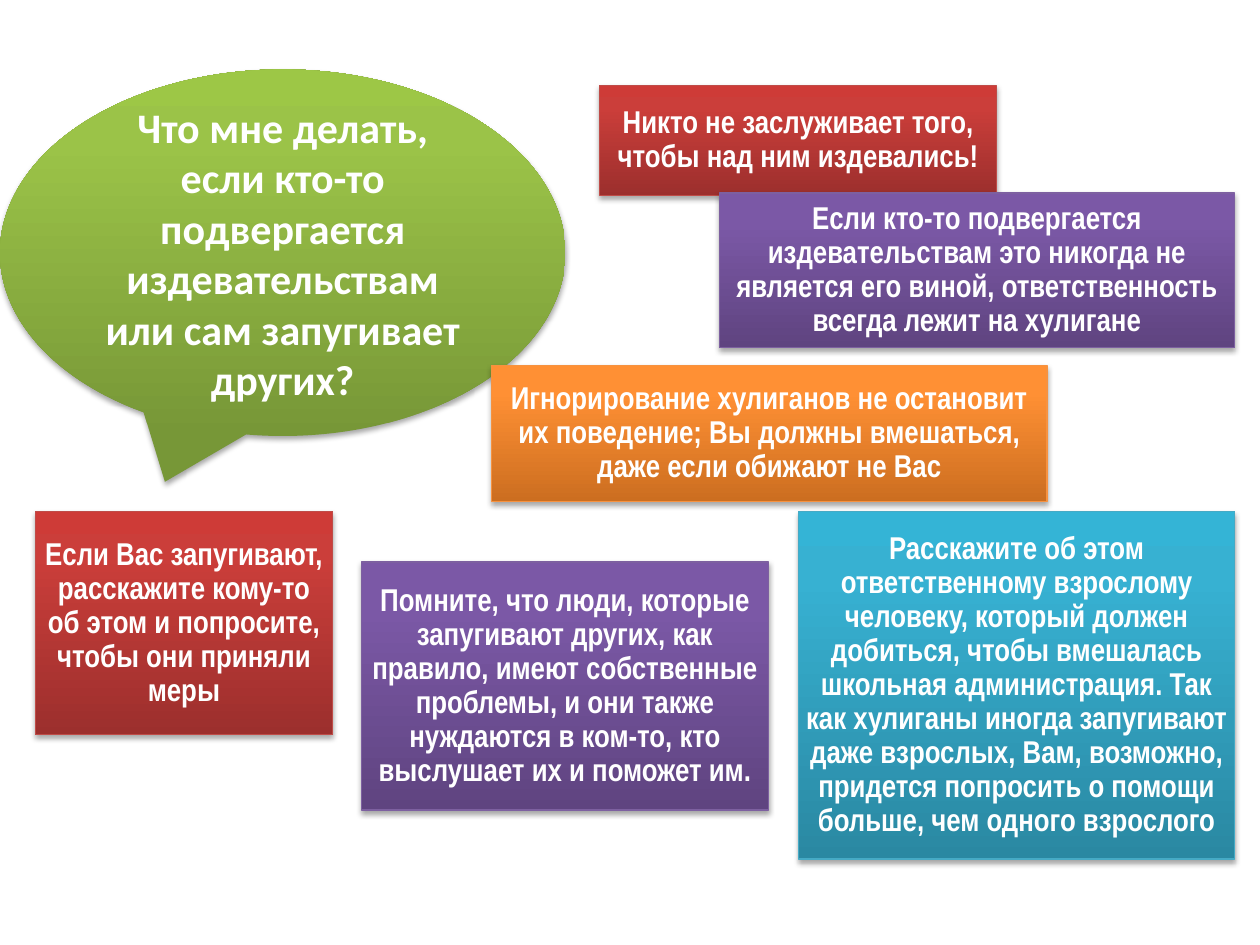
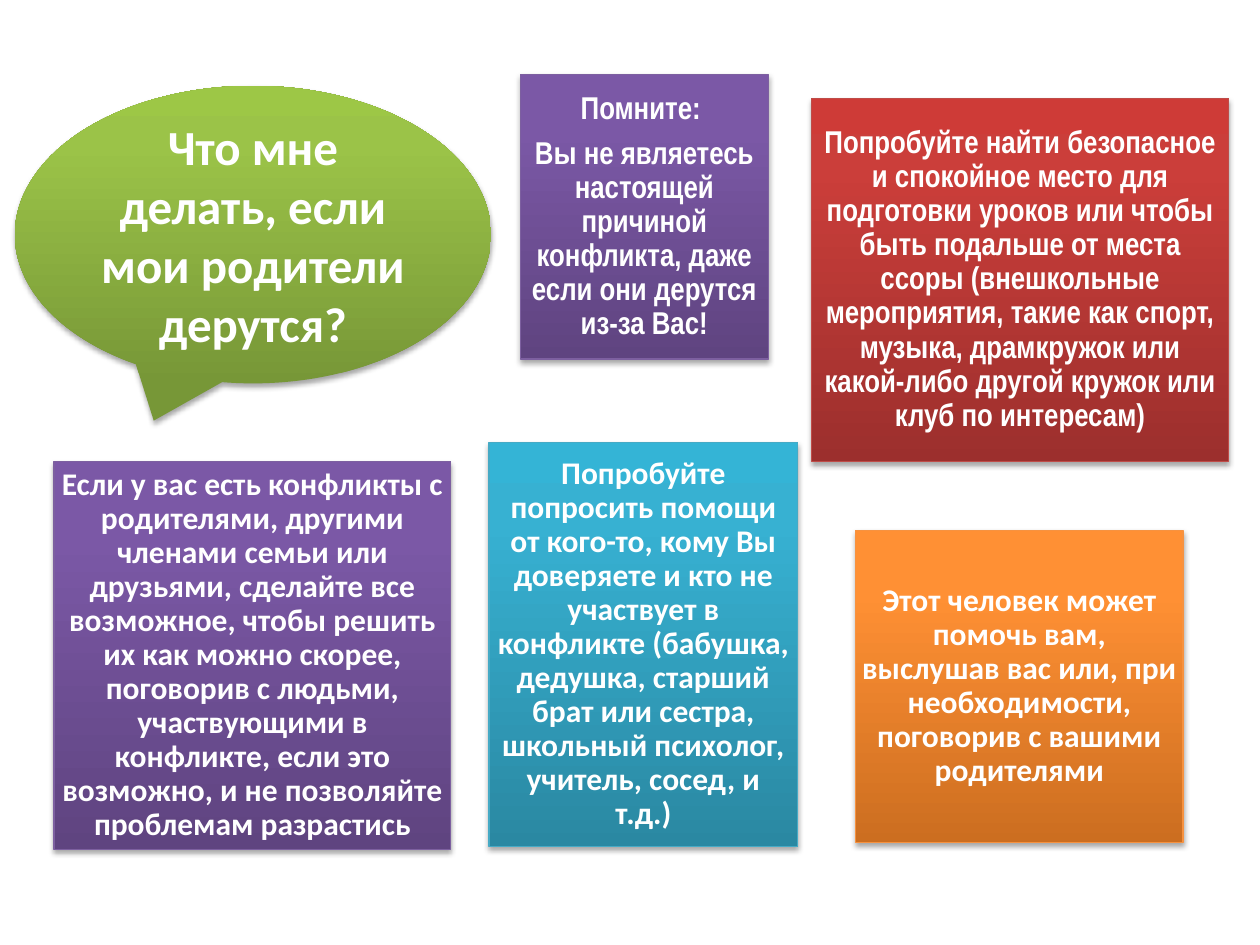
import pptx
import pptx.dml.color
import pptx.enum.shapes
import pptx.enum.text
import pptx.oxml
import pptx.oxml.ns
import pptx.util
import copy

Cm = pptx.util.Cm
Pt = pptx.util.Pt
RGBColor = pptx.dml.color.RGBColor
MSO_SHAPE = pptx.enum.shapes.MSO_SHAPE

WHITE = RGBColor(0xFF, 0xFF, 0xFF)

# Gradient colours from bottom to top
GREEN = (RGBColor(0x77, 0x97, 0x37), RGBColor(0x9B, 0xC3, 0x48), RGBColor(0x9D, 0xC7, 0x46))
RED = (RGBColor(0x9C, 0x2F, 0x2D), RGBColor(0xCB, 0x3E, 0x3A), RGBColor(0xCE, 0x3B, 0x37))
PURPLE = (RGBColor(0x5F, 0x44, 0x80), RGBColor(0x7B, 0x58, 0xA6), RGBColor(0x7C, 0x57, 0xA8))
ORANGE = (RGBColor(0xCC, 0x6E, 0x20), RGBColor(0xFF, 0x90, 0x34), RGBColor(0xFF, 0x91, 0x36))
TEAL = (RGBColor(0x2A, 0x88, 0xA2), RGBColor(0x37, 0xB1, 0xD2), RGBColor(0x34, 0xB4, 0xD6))
STOP_POSITIONS = (0, 0.8, 1)

OUTLINES = {
    RED: RGBColor(0xBF, 0x4C, 0x48),
    PURPLE: RGBColor(0x7D, 0x60, 0xA0),
    ORANGE: RGBColor(0xF6, 0x92, 0x40),
    TEAL: RGBColor(0x46, 0xAA, 0xC5),
}

NARROW = "Arial Narrow"
REGULAR = "Calibri"

SHADOW = (
    '<a:outerShdw %s blurRad="40000" dist="23000" dir="5400000" rotWithShape="0">'
    '<a:srgbClr val="000000"><a:alpha val="35000"/></a:srgbClr></a:outerShdw>'
    % pptx.oxml.ns.nsdecls("a")
)


def set_attributes(target, values):
    for name, value in values.items():
        setattr(target, name, value)


class AdviceDeck:
    """Holds the shared style and the slide being filled."""

    font_format = {"bold": True}
    card_frame = dict.fromkeys(
        ("margin_left", "margin_top", "margin_right", "margin_bottom"), Cm(0.12))
    card_paragraph = {"line_spacing": 0.9, "space_after": Pt(6.3)}

    def __init__(self):
        self.presentation = pptx.Presentation()
        self.presentation.slide_width = Cm(25.4)
        self.presentation.slide_height = Cm(19.05)
        self.slide = None

    def new_slide(self):
        self.slide = self.presentation.slides.add_slide(self.presentation.slide_layouts[6])

    def shaded_shape(self, kind, box, gradient):
        shape = self.slide.shapes.add_shape(kind, *(Cm(length) for length in box))
        shape.fill.gradient()
        shape.fill.gradient_angle = 90
        # The default gradient has two stops; a third is needed
        stop_list = shape._element.spPr.xpath("./a:gradFill/a:gsLst")[0]
        stop_list.append(copy.deepcopy(stop_list[-1]))
        for stop, position, color in zip(shape.fill.gradient_stops, STOP_POSITIONS, gradient):
            stop.position = position
            stop.color.rgb = color
        shape.shadow.inherit = False
        effects = shape._element.spPr.xpath("./a:effectLst")[0]
        effects.append(pptx.oxml.parse_xml(SHADOW))
        return shape

    def fill_text(self, shape, texts, font_name, size, paragraph_format):
        frame = shape.text_frame
        frame.word_wrap = True
        frame.vertical_anchor = pptx.enum.text.MSO_ANCHOR.MIDDLE
        for index, text in enumerate(texts):
            paragraph = frame.add_paragraph() if index else frame.paragraphs[0]
            paragraph.alignment = pptx.enum.text.PP_ALIGN.CENTER
            set_attributes(paragraph, paragraph_format)
            run = paragraph.add_run()
            run.text = text
            set_attributes(run.font, {**self.font_format, "name": font_name, "size": Pt(size)})
            run.font.color.rgb = WHITE

    def question(self, box, text, size):
        shape = self.shaded_shape(MSO_SHAPE.OVAL_CALLOUT, box, GREEN)
        shape.line.fill.background()
        self.fill_text(shape, [text], REGULAR, size, {})

    def card(self, box, gradient, *texts, font_name=NARROW):
        shape = self.shaded_shape(MSO_SHAPE.RECTANGLE, box, gradient)
        shape.line.color.rgb = OUTLINES[gradient]
        shape.line.width = Pt(0.75)
        set_attributes(shape.text_frame, self.card_frame)
        self.fill_text(shape, texts, font_name, 18, self.card_paragraph)


def build_bullying_slide(deck):
    deck.new_slide()
    deck.question((0, 1.4, 11.4, 7.39),
                  "Что мне делать, если кто-то подвергается издевательствам "
                  "или сам запугивает других?", 24)
    # Principles
    deck.card((12.09, 1.73, 8, 2.21), RED,
              "Никто не заслуживает того, чтобы над ним издевались!")
    deck.card((14.5, 3.89, 10.39, 3.12), PURPLE,
              "Если кто-то подвергается издевательствам это никогда не является "
              "его виной, ответственность всегда лежит на хулигане")
    deck.card((9.91, 7.37, 11.2, 2.74), ORANGE,
              "Игнорирование хулиганов не остановит их поведение; "
              "Вы должны вмешаться, даже если обижают не Вас")
    # Actions
    deck.card((16.1, 10.31, 8.79, 7.01), TEAL,
              "Расскажите об этом ответственному взрослому человеку, который должен "
              "добиться, чтобы вмешалась школьная администрация. Так как хулиганы "
              "иногда запугивают даже взрослых, Вам, возможно, придется попросить "
              "о помощи больше, чем одного взрослого")
    deck.card((0.71, 10.31, 6, 4.5), RED,
              "Если Вас запугивают, расскажите кому-то об этом и попросите, "
              "чтобы они приняли меры")
    deck.card((7.29, 11.33, 8.2, 5), PURPLE,
              "Помните, что люди, которые запугивают других, как правило, имеют "
              "собственные проблемы, и они также нуждаются в ком-то, кто выслушает "
              "их и поможет им.")


def build_parents_slide(deck):
    deck.new_slide()
    deck.question((0.3, 1.73, 9.6, 6), "Что мне делать, если мои родители дерутся?", 28)
    # Asking for help
    deck.card((9.86, 8.92, 6.22, 8.15), TEAL,
              "Попробуйте попросить помощи от кого-то, кому Вы доверяете и кто не "
              "участвует в конфликте (бабушка, дедушка, старший брат или сестра, "
              "школьный психолог, учитель, сосед, и т.д.)", font_name=REGULAR)
    deck.card((17.25, 10.69, 6.6, 6.3), ORANGE,
              "Этот человек может помочь вам, выслушав вас или, при необходимости, "
              "поговорив с вашими родителями", font_name=REGULAR)
    deck.card((1.09, 9.3, 8, 7.82), PURPLE,
              "Если у вас есть конфликты с родителями, другими членами семьи или "
              "друзьями, сделайте все возможное, чтобы решить их как можно скорее, "
              "поговорив с людьми, участвующими в конфликте, если это возможно, "
              "и не позволяйте проблемам разрастись", font_name=REGULAR)
    # Keeping apart from the quarrel
    deck.card((10.49, 1.5, 5, 5.74), PURPLE,
              "Помните: ",
              "Вы не являетесь настоящей причиной конфликта, даже если они "
              "дерутся из-за Вас!")
    deck.card((16.36, 1.98, 8.41, 7.32), RED,
              "Попробуйте найти безопасное и спокойное место для подготовки уроков "
              "или чтобы быть подальше от места ссоры (внешкольные мероприятия, "
              "такие как спорт, музыка, драмкружок или какой-либо другой кружок "
              "или клуб по интересам)")


def main():
    deck = AdviceDeck()
    build_bullying_slide(deck)
    build_parents_slide(deck)
    deck.presentation.save("out.pptx")


if __name__ == "__main__":
    main()
